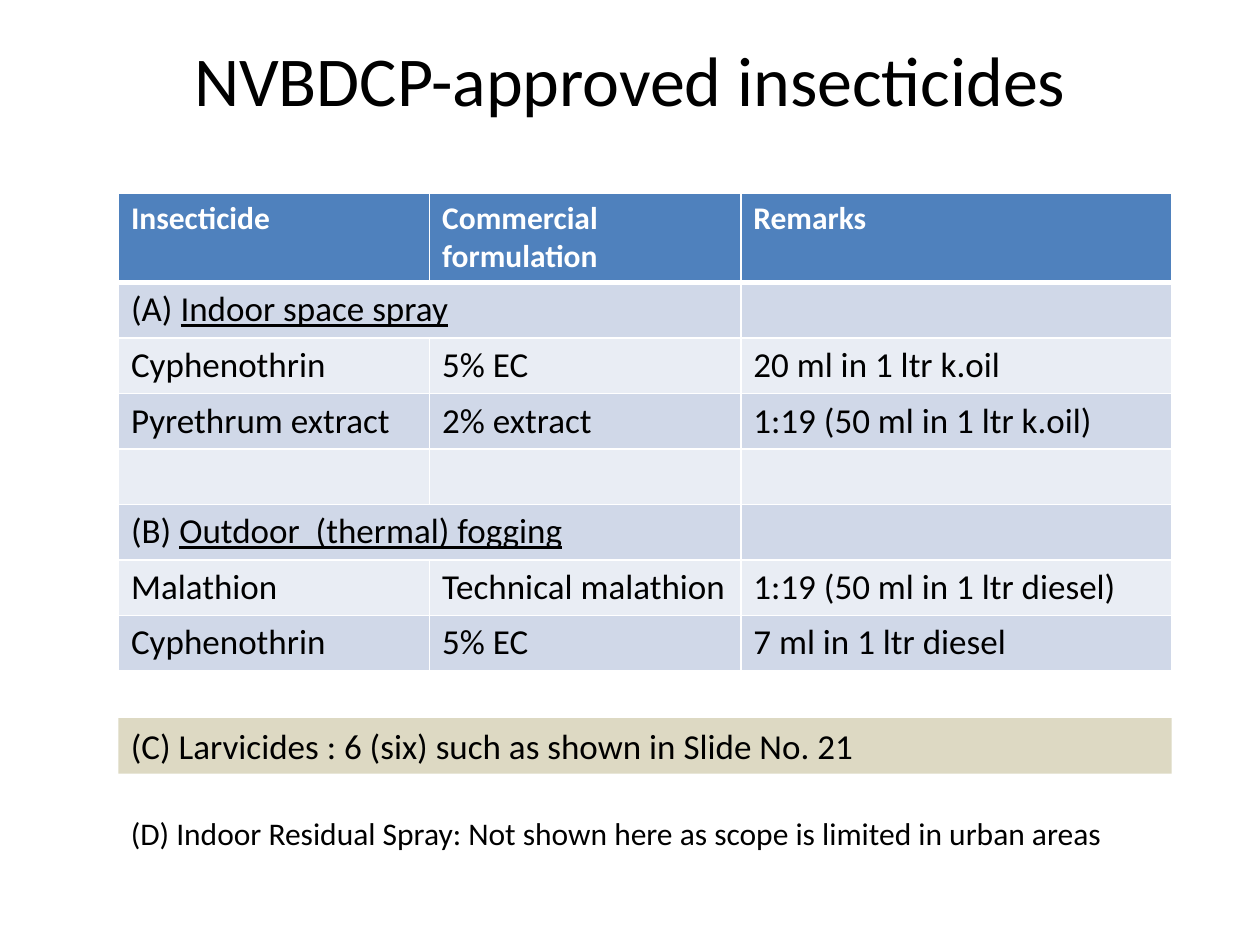
import pptx
import pptx.dml.color
import pptx.enum.shapes
import pptx.enum.text
import pptx.oxml
import pptx.oxml.ns
import pptx.util

Inches = pptx.util.Inches
COLORS = {
    "text": "000000",
    "white": "FFFFFF",
    "header": "4F81BD",
    "dark band": "D0D8E8",
    "light band": "E9EDF4",
    "larvicides": "DDD9C3",
}
LEFT, WIDTH = 0.94, 8.36
COLUMN_WIDTHS = [2.47, 2.47, 3.42]
HEADER_HEIGHT, ROW_HEIGHT = 0.7, 0.44

HEADINGS = ["Insecticide", "Commercial formulation", "Remarks"]
# A two-item row is a section heading: its marker and its underlined name.
ROWS = [
    ("(A) ", "Indoor space spray"),
    ("Cyphenothrin", "5% EC", "20 ml in 1 ltr k.oil"),
    ("Pyrethrum extract", "2% extract", "1:19 (50 ml in 1 ltr k.oil)"),
    ("", "", ""),
    ("(B) ", "Outdoor  (thermal) fogging"),
    ("Malathion", "Technical malathion", "1:19 (50 ml in 1 ltr diesel)"),
    ("Cyphenothrin", "5% EC", "7 ml in 1 ltr diesel"),
]


def rgb(name):
    return pptx.dml.color.RGBColor.from_string(COLORS[name])


class SlideWriter:
    font = "Calibri"

    def __init__(self, page):
        self.page = page

    def span(self, para, text, size, color="text", bold=False, underline=False):
        span = para.add_run()
        span.text = text
        span.font.name = self.font
        span.font.size = pptx.util.Pt(size)
        span.font.color.rgb = rgb(color)
        span.font.bold = bold
        span.font.underline = underline

    def title(self, text):
        box = self.page.shapes.title
        box.left, box.top = Inches(0.5), Inches(0)
        box.width, box.height = Inches(9), Inches(1.25)
        box.text_frame.vertical_anchor = pptx.enum.text.MSO_ANCHOR.MIDDLE
        para = box.text_frame.paragraphs[0]
        para.alignment = pptx.enum.text.PP_ALIGN.CENTER
        self.span(para, text, 40)

    def note(self, text, top, height, size, fill=None):
        place = [Inches(value) for value in (LEFT, top, WIDTH, height)]
        if fill:
            rectangle = pptx.enum.shapes.MSO_SHAPE.RECTANGLE
            box = self.page.shapes.add_shape(rectangle, *place)
            box.shadow.inherit = False
            box.fill.solid()
            box.fill.fore_color.rgb = rgb(fill)
            box.line.fill.background()
        else:
            box = self.page.shapes.add_textbox(*place)
        frame = box.text_frame
        frame.word_wrap = True
        frame.auto_size = pptx.enum.text.MSO_AUTO_SIZE.SHAPE_TO_FIT_TEXT
        frame.vertical_anchor = pptx.enum.text.MSO_ANCHOR.TOP
        para = frame.paragraphs[0]
        para.alignment = pptx.enum.text.PP_ALIGN.LEFT
        self.span(para, text, size)

    def cell_style(self, cell, fill, top=1, bottom=1):
        """Fill the cell and give it white borders; widths are in points."""
        properties = cell._tc.get_or_add_tcPr()
        for side, points in (("L", 1), ("R", 1), ("T", top), ("B", bottom)):
            properties.append(pptx.oxml.parse_xml(
                f'<a:ln{side} {pptx.oxml.ns.nsdecls("a")} w="{pptx.util.Pt(points)}">'
                f'<a:solidFill><a:srgbClr val="{COLORS["white"]}"/></a:solidFill>'
                f'</a:ln{side}>'
            ))
        cell.fill.solid()
        cell.fill.fore_color.rgb = rgb(fill)

    def table(self, headings, rows, top):
        height = HEADER_HEIGHT + ROW_HEIGHT * len(rows)
        grid = self.page.shapes.add_table(
            len(rows) + 1, len(headings),
            Inches(LEFT), Inches(top), Inches(WIDTH), Inches(height),
        ).table
        for column, width in zip(grid.columns, COLUMN_WIDTHS):
            column.width = Inches(width)
        for number, row in enumerate(grid.rows):
            row.height = Inches(ROW_HEIGHT if number else HEADER_HEIGHT)

        for cell, heading in zip(grid.rows[0].cells, headings):
            self.cell_style(cell, "header", bottom=3)
            self.span(cell.text_frame.paragraphs[0], heading, 18, "white", bold=True)

        for number, texts in enumerate(rows, 1):
            cells = list(grid.rows[number].cells)
            for cell in cells:
                self.cell_style(cell, "dark band" if number % 2 else "light band",
                                top=3 if number == 1 else 1)
            if len(texts) == 2:
                cells[0].merge(cells[1])
                para = cells[0].text_frame.paragraphs[0]
                self.span(para, texts[0], 20)
                self.span(para, texts[1], 20, underline=True)
                continue
            for cell, text in zip(cells, texts):
                if text:
                    self.span(cell.text_frame.paragraphs[0], text, 20)


def main():
    deck = pptx.Presentation()
    deck.slide_width, deck.slide_height = Inches(10), Inches(7.5)
    title_only = deck.slide_layouts[5]
    writer = SlideWriter(deck.slides.add_slide(title_only))
    writer.title("NVBDCP-approved insecticides")
    writer.table(HEADINGS, ROWS, top=1.53)
    writer.note("(C) Larvicides : 6 (six) such as shown in Slide No. 21",
                top=5.7, height=0.44, size=20, fill="larvicides")
    writer.note("(D) Indoor Residual Spray: Not shown here as scope is limited in urban areas",
                top=6.41, height=0.4, size=18)
    deck.save("out.pptx")


if __name__ == "__main__":
    main()
